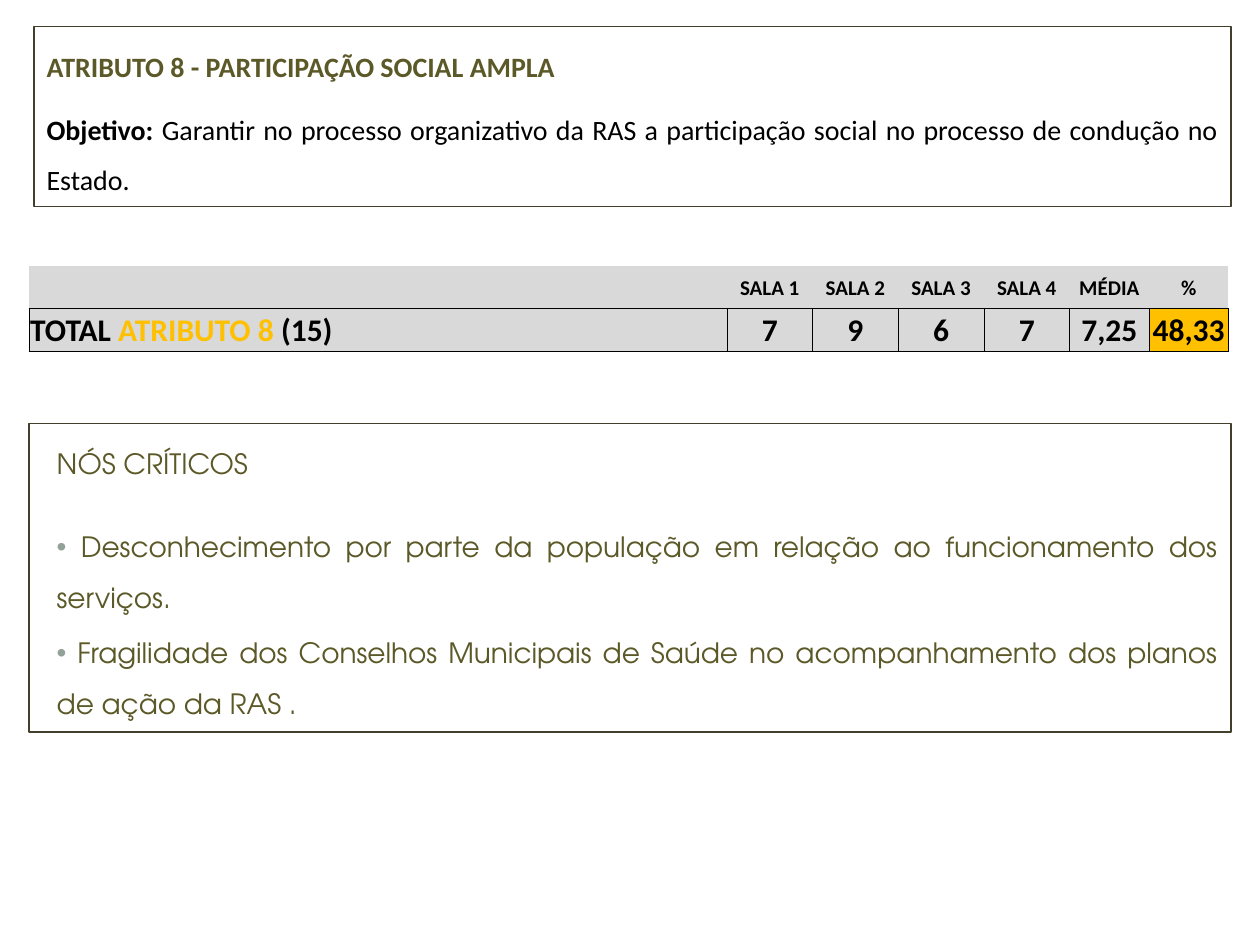
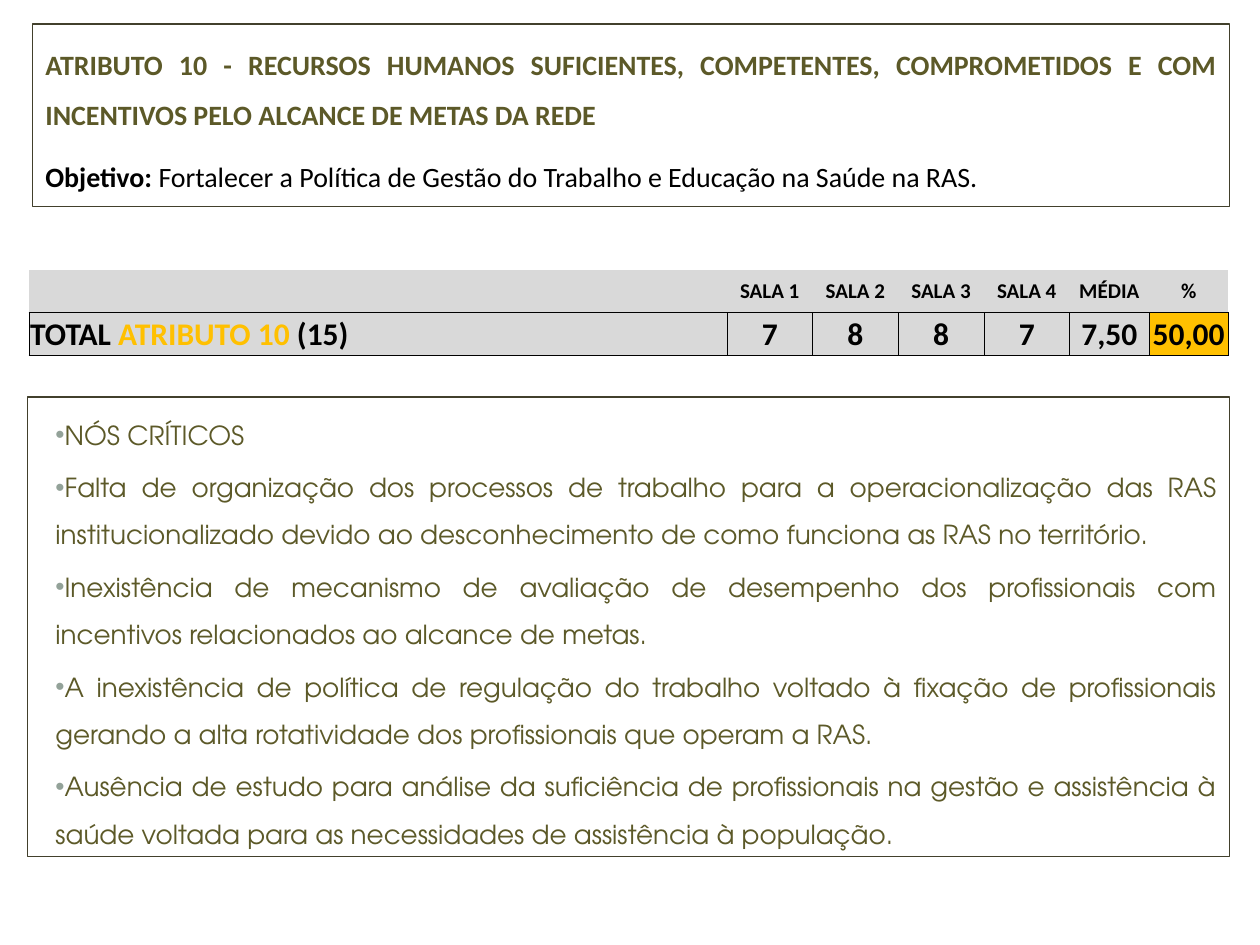
from lxml.etree import SubElement
from pptx import Presentation
from pptx.dml.color import RGBColor
from pptx.enum.text import MSO_ANCHOR, MSO_AUTO_SIZE, PP_ALIGN
from pptx.oxml.ns import qn
from pptx.util import Inches, Pt

COLORS = {
    "olive": "5C5928", "frame": "42402C", "bullet": "93A299", "black": "000000",
    "white": "FFFFFF", "gray": "D9D9D9", "amber": "FFC000",
}
HEADING_FONT, LIST_FONT = "Calibri", "TeX Gyre Adventor"
NO_TABLE_STYLE = "{2D5ABB26-0587-4C30-8999-92F81FD0307C}"
COLUMN_WIDTHS = [3.98, 0.62, 0.94] + [0.68] * 4 + [0.63] * 2
LABEL_COLUMNS = 3
ROW_HEIGHT = 0.34
SCORE_HEADERS = ["SALA 1", "SALA 2", "SALA 3", "SALA 4", "MÉDIA", "%"]

ATTRIBUTES = [
    {
        "name": "ATRIBUTO 8",
        "title": "ATRIBUTO 8 - PARTICIPAÇÃO SOCIAL AMPLA",
        "goal": "Garantir no processo organizativo da RAS a participação social "
                "no processo de condução no Estado.",
        "scores": ["7", "9", "6", "7", "7,25", "48,33"],
        "heading_box": (0.27, 0.21, 9.5, 1.43),
        "table_top": 2.11,
        "list_box": (0.23, 3.36, 9.54, 2.45),
        "list_size": 16,
        "label_bullet": False,
        "first_gap": 19,
        "issues": [
            " Desconhecimento por parte da população em relação ao funcionamento dos serviços.",
            " Fragilidade dos Conselhos Municipais de Saúde no acompanhamento "
            "dos planos de ação da RAS .",
        ],
    },
    {
        "name": "ATRIBUTO 10",
        "title": "ATRIBUTO 10 - RECURSOS HUMANOS SUFICIENTES, COMPETENTES, COMPROMETIDOS "
                 "E COM INCENTIVOS PELO ALCANCE DE METAS DA REDE",
        "goal": "Fortalecer a Política de Gestão do Trabalho e Educação na Saúde na RAS.",
        "scores": ["7", "8", "8", "7", "7,50", "50,00"],
        "heading_box": (0.26, 0.19, 9.5, 1.45),
        "table_top": 2.14,
        "list_box": (0.22, 3.15, 9.54, 3.65),
        "list_size": 15,
        "label_bullet": True,
        "first_gap": 3,
        "issues": [
            "Falta de organização dos processos de trabalho para a operacionalização das RAS "
            "institucionalizado devido ao desconhecimento de como funciona as RAS no território.",
            "Inexistência de mecanismo de avaliação de desempenho dos profissionais "
            "com incentivos relacionados ao alcance de metas.",
            "A inexistência de política de regulação do trabalho voltado à fixação de "
            "profissionais gerando a alta rotatividade dos profissionais que operam a RAS.",
            "Ausência de estudo para análise da suficiência de profissionais na gestão e "
            "assistência à saúde voltada para as necessidades de assistência à população.",
        ],
    },
]


def add_text(paragraph, text, size=16, color="black", bold=False, font=HEADING_FONT,
             align=PP_ALIGN.JUSTIFY, spacing=1.5, before=0):
    """Append a run and set the format of its paragraph."""
    paragraph.alignment = align
    paragraph.line_spacing = spacing
    paragraph.space_before = Pt(before)
    run = paragraph.add_run()
    run.text = text
    run.font.size, run.font.bold, run.font.name = Pt(size), bold, font
    run.font.color.rgb = RGBColor.from_string(COLORS[color])


def frame_placeholder(placeholder, box):
    """Place a placeholder as a white, thinly framed box; return its text frame."""
    placeholder.left, placeholder.top, placeholder.width, placeholder.height = map(Inches, box)
    placeholder.fill.solid()
    placeholder.fill.fore_color.rgb = RGBColor.from_string(COLORS["white"])
    placeholder.line.color.rgb = RGBColor.from_string(COLORS["frame"])
    placeholder.line.width = Pt(0.75)
    frame = placeholder.text_frame
    frame.word_wrap = True
    frame.auto_size = MSO_AUTO_SIZE.NONE
    frame.vertical_anchor = MSO_ANCHOR.TOP
    return frame


deck = Presentation()
deck.slide_width, deck.slide_height = Inches(10), Inches(7.5)

for attribute in ATTRIBUTES:
    slide = deck.slides.add_slide(deck.slide_layouts[1])

    # Attribute and its goal
    heading = frame_placeholder(slide.shapes.title, attribute["heading_box"])
    add_text(heading.paragraphs[0], attribute["title"], color="olive", bold=True)
    goal = heading.add_paragraph()
    add_text(goal, "Objetivo: ", bold=True, before=7)
    add_text(goal, attribute["goal"], before=7)

    # Critical issues
    issues = frame_placeholder(slide.placeholders[1], attribute["list_box"])
    for index, issue in enumerate(["NÓS CRÍTICOS"] + attribute["issues"]):
        item = issues.paragraphs[0] if index == 0 else issues.add_paragraph()
        gap = {0: 0, 1: attribute["first_gap"]}.get(index, 3)
        add_text(item, issue, size=attribute["list_size"], color="olive",
                 font=LIST_FONT, before=gap)
        props = item._p.get_or_add_pPr()
        props.set("marL", str(Inches(0.12)))
        props.set("indent", "0")
        if index or attribute["label_bullet"]:
            bullet_color = SubElement(props, qn("a:buClr"))
            SubElement(bullet_color, qn("a:srgbClr"), val=COLORS["bullet"])
            SubElement(props, qn("a:buFont"), typeface="Arial")
            SubElement(props, qn("a:buChar"), char="•")
        else:
            SubElement(props, qn("a:buNone"))

    # Score table
    scores = slide.shapes.add_table(
        2, len(COLUMN_WIDTHS), Inches(0.23), Inches(attribute["table_top"]),
        Inches(sum(COLUMN_WIDTHS)), Inches(2 * ROW_HEIGHT)).table
    scores.first_row = scores.horz_banding = False
    scores._tbl.tblPr[0].text = NO_TABLE_STYLE
    for column, width in zip(scores.columns, COLUMN_WIDTHS):
        column.width = Inches(width)
    for row in scores.rows:
        row.height = Inches(ROW_HEIGHT)
    scores.cell(1, 0).merge(scores.cell(1, LABEL_COLUMNS - 1))

    for row_index, row in enumerate(scores.rows):
        for column_index, cell in enumerate(row.cells):
            cell.margin_left = cell.margin_right = cell.margin_top = Inches(0.01)
            cell.margin_bottom = 0
            cell.vertical_anchor = MSO_ANCHOR.MIDDLE
            for side in ("L", "R", "T", "B") if row_index else ("B",):
                border = SubElement(cell._tc.get_or_add_tcPr(), qn(f"a:ln{side}"),
                                    w=str(Pt(0.5)))
                border_fill = SubElement(border, qn("a:solidFill"))
                SubElement(border_fill, qn("a:srgbClr"), val=COLORS["black"])
            is_percent = row_index == 1 and column_index == len(COLUMN_WIDTHS) - 1
            cell.fill.solid()
            cell.fill.fore_color.rgb = RGBColor.from_string(
                COLORS["amber" if is_percent else "gray"])

    total = scores.cell(1, 0).text_frame.paragraphs[0]
    for text, color in (("TOTAL ", "black"), (attribute["name"] + " ", "amber"),
                        ("(15)", "black")):
        add_text(total, text, size=18, color=color, bold=True,
                 align=PP_ALIGN.LEFT, spacing=1.0)
    for row_index, (texts, size) in enumerate(((SCORE_HEADERS, 12), (attribute["scores"], 18))):
        for column_index, text in enumerate(texts, start=LABEL_COLUMNS):
            add_text(scores.cell(row_index, column_index).text_frame.paragraphs[0], text,
                     size=size, bold=True, align=PP_ALIGN.CENTER, spacing=1.0)

deck.save("out.pptx")
